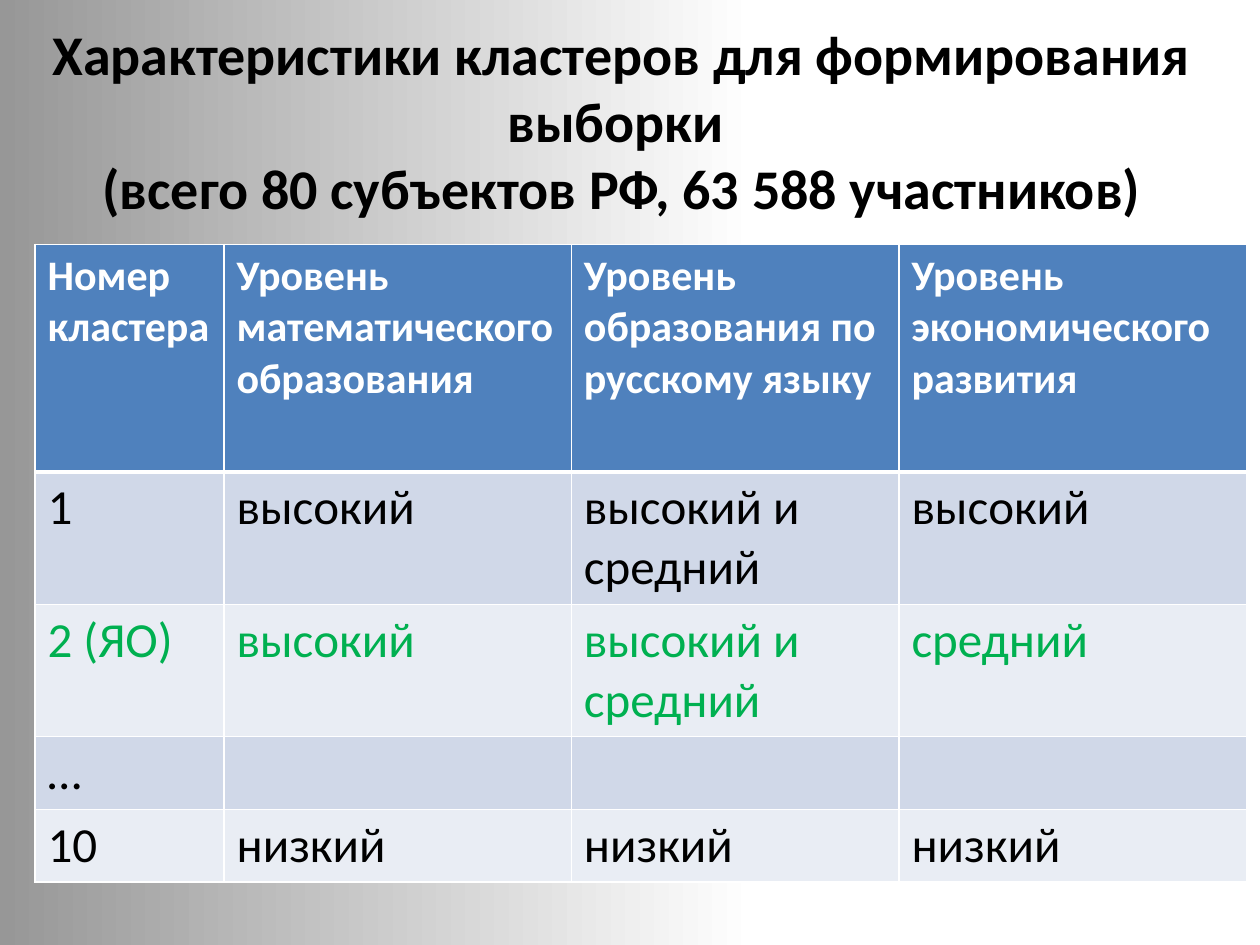
from lxml import etree
from pptx import Presentation
from pptx.dml.color import RGBColor
from pptx.enum import text
from pptx.oxml.ns import qn
from pptx.util import Pt

FONT = "Calibri"
HUES = {
    "white": "FFFFFF",
    "grey": "979797",
    "black": "000000",
    "blue": "4F81BD",
    "dark": "D0D8E8",
    "light": "E9EDF4",
    "green": "00B050",
}
TITLE = "Характеристики кластеров для формирования выборки \v(всего 80 субъектов РФ, 63 588 участников)"
ROWS = [
    ["Номер кластера", "Уровень математического образования",
     "Уровень образования по русскому языку", "Уровень экономического развития"],
    ["1", "высокий", "высокий и средний", "высокий"],
    ["2 (ЯО)", "высокий", "высокий и средний", "средний"],
    ["…", "", "", ""],
    ["10", "низкий", "низкий", "низкий"],
]
WIDTHS = [108, 198.5, 187.2, 198.5]
HEIGHTS = [130, 75.5, 75.5, 41.3, 41.3]
OWN_ROW = 2


def hue(name):
    return RGBColor.from_string(HUES[name])


def style(par, size, color, bold):
    font = par.font
    font.name, font.size, font.bold = FONT, Pt(size), bold
    font.color.rgb = hue(color)


def edge(cell, side, width):
    props = cell._tc.get_or_add_tcPr()
    line = etree.SubElement(props, qn(f"a:ln{side}"), w=str(Pt(width)))
    fill = etree.SubElement(line, qn("a:solidFill"))
    etree.SubElement(fill, qn("a:srgbClr"), val=HUES["white"])


def backdrop(slide):
    fill = slide.background.fill
    fill.gradient()
    fill.gradient_angle = 180
    for stop, (place, name) in zip(fill.gradient_stops, [(0.4, "white"), (1, "grey")]):
        stop.position = place
        stop.color.rgb = hue(name)


def heading(slide, left, top, width, height):
    title = slide.shapes.title
    title.left, title.top = Pt(left), Pt(top)
    title.width, title.height = Pt(width), Pt(height)
    frame = title.text_frame
    frame.text = TITLE
    frame.word_wrap = True
    frame.auto_size = text.MSO_AUTO_SIZE.NONE
    frame.vertical_anchor = text.MSO_ANCHOR.MIDDLE
    par = frame.paragraphs[0]
    par.alignment = text.PP_ALIGN.CENTER
    style(par, 32, "black", True)


def clusters(slide, left, top):
    frame = slide.shapes.add_table(
        len(ROWS), len(WIDTHS), Pt(left), Pt(top), Pt(sum(WIDTHS)), Pt(sum(HEIGHTS)))
    table = frame.table
    for col, width in zip(table.columns, WIDTHS):
        col.width = Pt(width)
    for i, (row, height) in enumerate(zip(table.rows, HEIGHTS)):
        row.height = Pt(height)
        head = i == 0
        shade = "blue" if head else "dark" if i % 2 else "light"
        ink = "white" if head else "green" if i == OWN_ROW else "black"
        for cell, words in zip(row.cells, ROWS[i]):
            cell.text = words
            style(cell.text_frame.paragraphs[0], 24 if head else 28, ink, head)
            for side in "LRTB":
                thick = (side == "B" and head) or (side == "T" and i == 1)
                edge(cell, side, 3 if thick else 1)
            cell.fill.solid()
            cell.fill.fore_color.rgb = hue(shade)


def main():
    deck = Presentation()
    deck.slide_width, deck.slide_height = Pt(720), Pt(540)
    slide = deck.slides.add_slide(deck.slide_layouts[5])
    backdrop(slide)
    heading(slide, 0, 3.6, 711, 130.3)
    clusters(slide, 20, 139.7)
    deck.save("out.pptx")


if __name__ == "__main__":
    main()
